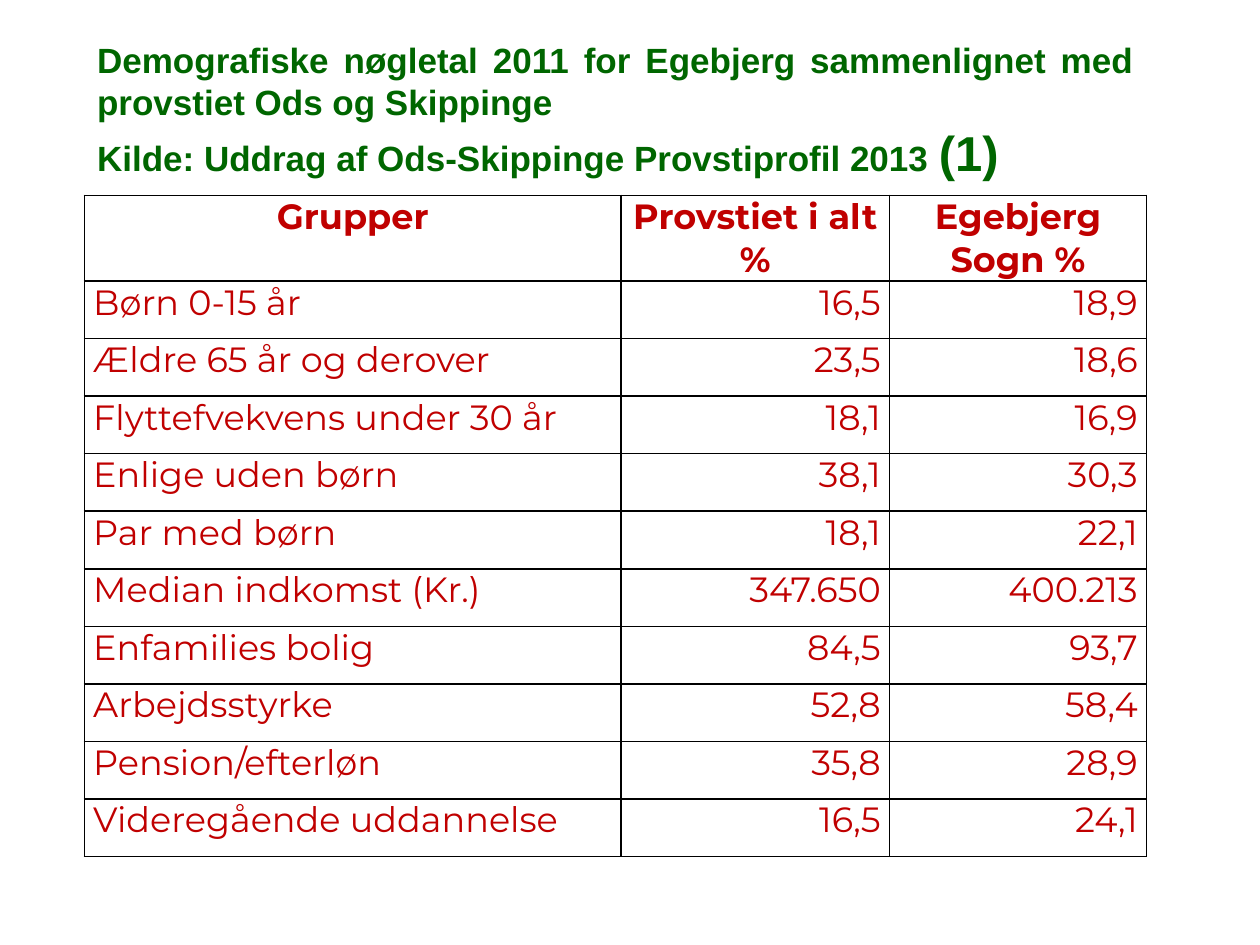
from dataclasses import dataclass

from lxml.etree import SubElement
from pptx import Presentation
from pptx.dml.color import RGBColor
from pptx.enum.text import MSO_ANCHOR as Anchor, MSO_AUTO_SIZE as AutoSize, PP_ALIGN as Align
from pptx.oxml.ns import qn
from pptx.util import Inches, Pt

GREEN = RGBColor(0x00, 0x66, 0x00)
RED = RGBColor(0xC0, 0x00, 0x00)
WHITE = RGBColor(0xFF, 0xFF, 0xFF)
BLACK = RGBColor(0x00, 0x00, 0x00)

LEFT, WIDTH = 0.67, 8.43
TITLE_TOP, TITLE_HEIGHT = 0.25, 1.25
TABLE_TOP, HEADER_HEIGHT, ROW_HEIGHT = 1.55, 0.68, 0.457
COLUMN_WIDTHS = (4.26, 2.13, 2.04)
BORDER_SIDES = ("a:lnL", "a:lnR", "a:lnT", "a:lnB")


@dataclass(frozen=True)
class Group:
    name: str
    deanery: str
    parish: str


HEADER = Group("Grupper", "Provstiet i alt %", "Egebjerg Sogn %")
GROUPS = (
    Group("Børn 0-15 år", "16,5", "18,9"),
    Group("Ældre 65 år og derover", "23,5", "18,6"),
    Group("Flyttefvekvens under 30 år", "18,1", "16,9"),
    Group("Enlige uden børn", "38,1", "30,3"),
    Group("Par med børn", "18,1", "22,1"),
    Group("Median indkomst (Kr.)", "347.650", "400.213"),
    Group("Enfamilies bolig", "84,5", "93,7"),
    Group("Arbejdsstyrke", "52,8", "58,4"),
    Group("Pension/efterløn", "35,8", "28,9"),
    Group("Videregående uddannelse", "16,5", "24,1"),
)


def add_text(para, text: str, *, font: str, color: RGBColor, size: int = 20,
             bold: bool = False, align: Align = Align.LEFT) -> None:
    para.alignment = align
    span = para.add_run()
    span.text = text
    span.font.name = font
    span.font.size = Pt(size)
    span.font.bold = bold
    span.font.color.rgb = color


def add_borders(cell) -> None:
    properties = cell._tc.get_or_add_tcPr()
    for index, side in enumerate(BORDER_SIDES):
        line = SubElement(properties, qn(side), w=str(Pt(1)))
        fill = SubElement(line, qn("a:solidFill"))
        SubElement(fill, qn("a:srgbClr"), val=str(BLACK))
        properties.remove(line)
        properties.insert(index, line)


def write_title(box) -> None:
    box.left, box.top = Inches(LEFT), Inches(TITLE_TOP)
    box.width, box.height = Inches(WIDTH), Inches(TITLE_HEIGHT)
    frame = box.text_frame
    frame.word_wrap = True
    frame.auto_size = AutoSize.NONE
    frame.vertical_anchor = Anchor.MIDDLE
    style = dict(font="Arial", color=GREEN, bold=True, align=Align.JUSTIFY)
    add_text(frame.paragraphs[0], "Demografiske nøgletal 2011 for Egebjerg sammenlignet "
             "med provstiet Ods og Skippinge ", **style)
    source = frame.add_paragraph()
    add_text(source, "Kilde: Uddrag af Ods-Skippinge Provstiprofil 2013 ", **style)
    add_text(source, "(1)", size=28, **style)


def fill_cell(cell, text: str, *, bold: bool, align: Align) -> None:
    cell.fill.solid()
    cell.fill.fore_color.rgb = WHITE
    cell.margin_left = cell.margin_right = Inches(0.07)
    cell.margin_top = cell.margin_bottom = 0
    cell.vertical_anchor = Anchor.TOP
    add_borders(cell)
    add_text(cell.text_frame.paragraphs[0], text, font="Montserrat", color=RED,
             bold=bold, align=align)


def add_group_table(slide) -> None:
    records = (HEADER, *GROUPS)
    height = HEADER_HEIGHT + ROW_HEIGHT * len(GROUPS)
    table = slide.shapes.add_table(
        len(records), len(COLUMN_WIDTHS), Inches(LEFT), Inches(TABLE_TOP),
        Inches(WIDTH), Inches(height)).table
    table.horz_banding = False
    for column, width in zip(table.columns, COLUMN_WIDTHS):
        column.width = Inches(width)
    for row, record in zip(table.rows, records):
        is_header = record is HEADER
        row.height = Inches(HEADER_HEIGHT if is_header else ROW_HEIGHT)
        aligns = (Align.CENTER,) * 3 if is_header else (Align.LEFT, Align.RIGHT, Align.RIGHT)
        texts = (record.name, record.deanery, record.parish)
        for cell, text, align in zip(row.cells, texts, aligns):
            fill_cell(cell, text, bold=is_header, align=align)


def main() -> None:
    deck = Presentation()
    deck.slide_width, deck.slide_height = Inches(10), Inches(7.5)
    slide = deck.slides.add_slide(deck.slide_layouts[5])
    add_group_table(slide)
    write_title(slide.shapes.title)
    deck.save("out.pptx")


if __name__ == "__main__":
    main()
